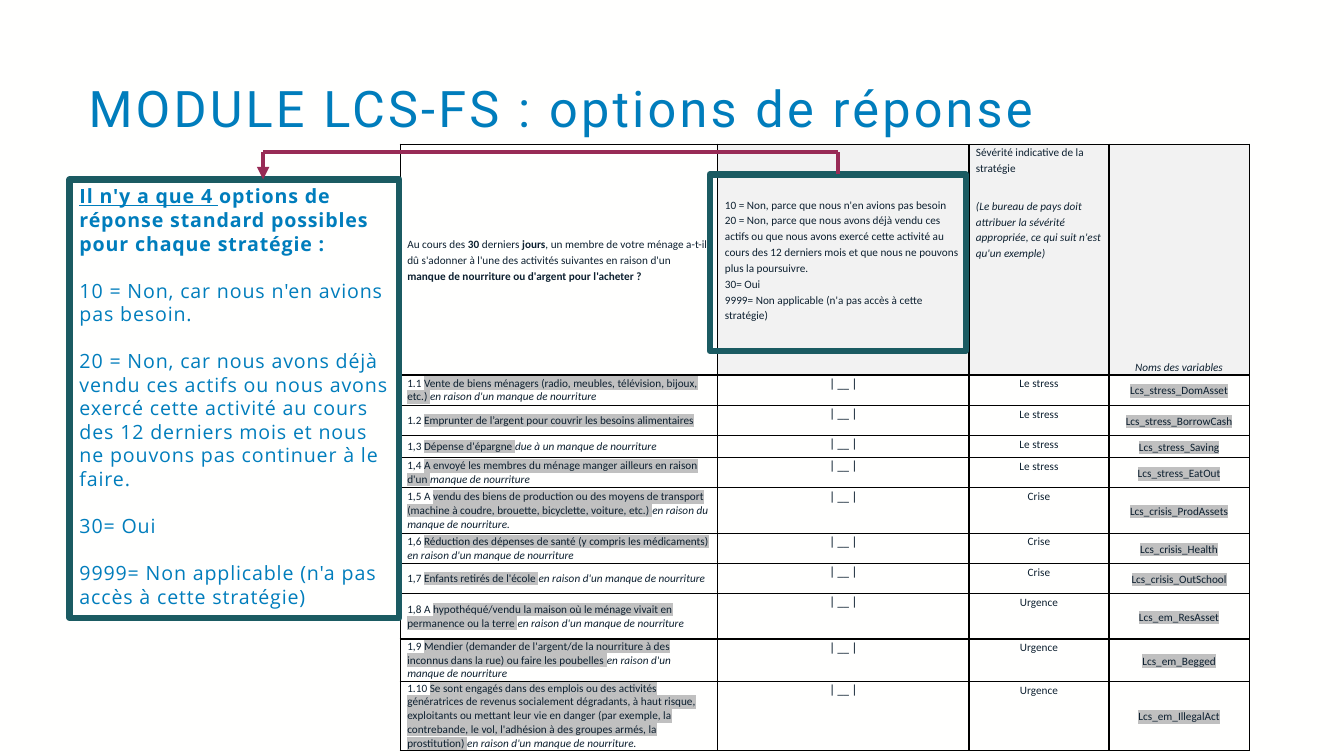
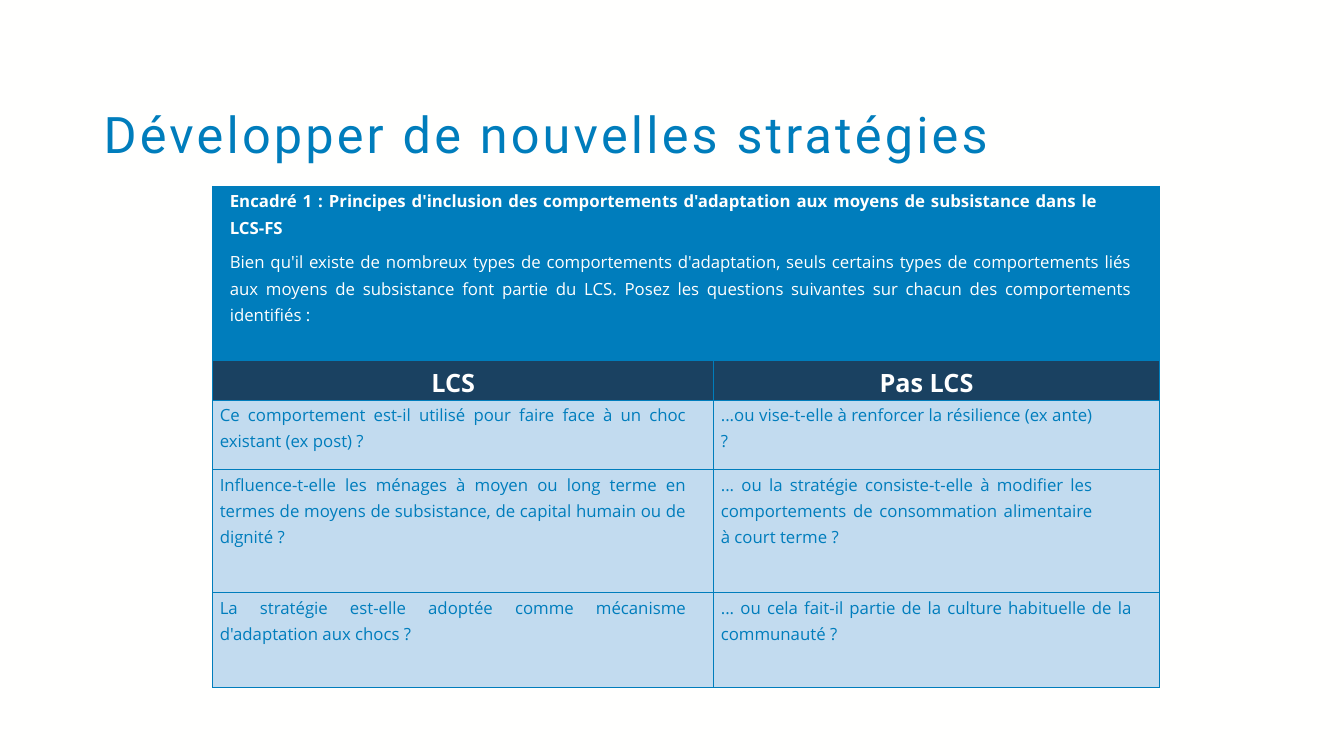
from lxml.etree import SubElement
from pptx import Presentation
from pptx.dml.color import RGBColor
from pptx.enum.shapes import MSO_CONNECTOR as Connector, MSO_SHAPE as Shape
from pptx.enum.text import MSO_ANCHOR as Anchor, PP_ALIGN as Align
from pptx.oxml.ns import qn
from pptx.util import Inches, Pt

PAPER = RGBColor(0xFF, 0xFF, 0xFE)
WHITE = RGBColor(0xFF, 0xFF, 0xFF)
BLACK = RGBColor(0, 0, 0)
INK = RGBColor(0x0D, 0x20, 0x30)
BLUE = RGBColor(0x00, 0x7D, 0xBC)
NAVY = RGBColor(0x1A, 0x41, 0x61)
PALE_BLUE = RGBColor(0xC2, 0xDB, 0xEF)
PALE_GREY = RGBColor(0xF2, 0xF2, 0xF2)
MARKER = RGBColor(0xC0, 0xC0, 0xC0)
TEAL = RGBColor(0x1B, 0x5B, 0x62)
PLUM = RGBColor(0x98, 0x2B, 0x56)

CELL_INSET = Inches(0.07)
SMALL = dict(size=8, font="Calibri", color=INK)
BODY = dict(size=12, font="Open Sans", color=BLUE, line=1.15, after=6)

BOLD = dict(bold=True)
ITALIC = dict(italic=True)
MARKED = dict(highlight=MARKER)
QUESTION = [
    "Au cours des ", ("30 ", BOLD), "derniers ", ("jours", BOLD),
    ", un membre de votre ménage a-t-il dû s'adonner à l'une des activités suivantes en raison d'un ",
    ("manque de nourriture ou d'argent pour l'acheter ?", BOLD)]
CODES = [
    "10 = Non, parce que nous n'en avions pas besoin",
    "20 = Non, parce que nous avons déjà vendu ces actifs ou que nous avons exercé cette activité "
    "au cours des 12 derniers mois et que nous ne pouvons plus la poursuivre.",
    "30= Oui",
    "9999= Non applicable (n'a pas accès à cette stratégie)"]
SEVERITY_NOTE = ("(Le bureau de pays doit attribuer la sévérité appropriée, "
                 "ce qui suit n'est qu'un exemple)")
LACK = "en raison d'un manque de nourriture"
# number, strategy, reason, severity, variable, row height
STRATEGIES = [
    ("1.1 ", "Vente de biens ménagers (radio, meubles, télévision, bijoux, etc.) ", LACK,
     "Le stress", "Lcs_stress_DomAsset", 0.3),
    ("1.2 ", "Emprunter de l’argent pour couvrir les besoins alimentaires", "",
     "Le stress", "Lcs_stress_BorrowCash", 0.3),
    ("1,3 ", "Dépense d'épargne ", "due à un manque de nourriture",
     "Le stress", "Lcs_stress_Saving", 0.22),
    ("1,4 ", "A envoyé les membres du ménage manger ailleurs en raison d'un ", "manque de nourriture",
     "Le stress", "Lcs_stress_EatOut", 0.3),
    ("1,5 A ", "vendu des biens de production ou des moyens de transport (machine à coudre, "
     "brouette, bicyclette, voiture, etc.) ", "en raison du manque de nourriture.",
     "Crise", "Lcs_crisis_ProdAssets", 0.45),
    ("1,6 ", "Réduction des dépenses de santé (y compris les médicaments) ", LACK,
     "Crise", "Lcs_crisis_Health", 0.3),
    ("1,7 ", "Enfants retirés de l'école ", LACK,
     "Crise", "Lcs_crisis_OutSchool", 0.3),
    ("1,8 A ", "hypothéqué/vendu la maison où le ménage vivait en permanence ou la terre ", LACK,
     "Urgence", "Lcs_em_ResAsset", 0.45),
    ("1,9 ", "Mendier (demander de l'argent/de la nourriture à des inconnus dans la rue) "
     "ou faire les poubelles ", LACK,
     "Urgence", "Lcs_em_Begged", 0.42),
    ("1.10 ", "Se sont engagés dans des emplois ou des activités génératrices de revenus "
     "socialement dégradants, à haut risque, exploitants ou mettant leur vie en danger "
     "(par exemple, la contrebande, le vol, l'adhésion à des groupes armés, la prostitution) ",
     LACK + ".", "Urgence", "Lcs_em_IllegalAct", 0.68),
]
ANSWERS = [
    [("Il n'y a que 4 ", dict(bold=True, underline=True)),
     ("options de réponse standard possibles pour chaque stratégie :", BOLD)],
    "10 = Non, car nous n'en avions pas besoin.",
    "20 = Non, car nous avons déjà vendu ces actifs ou nous avons exercé cette activité au cours "
    "des 12 derniers mois et nous ne pouvons pas continuer à le faire.",
    "30= Oui",
    "9999= Non applicable (n'a pas accès à cette stratégie)"]
BOX_TITLE = ("Encadré 1 : Principes d'inclusion des comportements d'adaptation aux moyens de "
             "subsistance dans le LCS-FS")
BOX_INTRO = ("Bien qu'il existe de nombreux types de comportements d'adaptation, seuls certains types "
             "de comportements liés aux moyens de subsistance font partie du LCS. Posez les questions "
             "suivantes sur chacun des comportements identifiés :")
# LCS question, counter-question, right indent of the latter, row height
CRITERIA = [
    ("Ce comportement est-il utilisé pour faire face à un choc existant (ex post) ?",
     "...ou vise-t-elle à renforcer la résilience (ex ante) ?", 0.59, 0.69),
    ("Influence-t-elle les ménages à moyen ou long terme en termes de moyens de subsistance, "
     "de capital humain ou de dignité ?",
     "... ou la stratégie consiste-t-elle à modifier les comportements de consommation alimentaire "
     "à court terme ?", 0.59, 1.22),
    ("La stratégie est-elle adoptée comme mécanisme d'adaptation aux chocs ?",
     "... ou cela fait-il partie de la culture habituelle de la communauté ?", 0.2, 0.94),
]


def format_run(run, size, font, color, bold=False, italic=False, underline=False,
               spacing=0, highlight=None):
    style = run.font
    style.size, style.name = Pt(size), font
    style.bold, style.italic, style.underline = bold, italic, underline
    style.color.rgb = color
    properties = run._r.get_or_add_rPr()
    if spacing:
        properties.set("spc", str(round(spacing * 100)))
    if highlight is not None:
        marker = SubElement(properties, qn("a:highlight"))
        SubElement(marker, qn("a:srgbClr")).set("val", str(highlight))
        properties.find(qn("a:solidFill")).addnext(marker)


def write(frame, text, align=Align.LEFT, line=1.0, before=0, after=0,
          left=0, right=0, **run_format):
    """Add one paragraph; text is a string or a list of strings and (string, format) pairs."""
    first = frame.paragraphs[0]
    paragraph = frame.add_paragraph() if first.runs else first
    paragraph.alignment, paragraph.line_spacing = align, line
    paragraph.space_before, paragraph.space_after = Pt(before), Pt(after)
    properties = paragraph._p.get_or_add_pPr()
    properties.set("marL", str(Inches(left)))
    properties.set("marR", str(Inches(right)))
    for part in [text] if isinstance(text, str) else text:
        words, extra = (part, {}) if isinstance(part, str) else part
        run = paragraph.add_run()
        run.text = words
        format_run(run, **{**run_format, **extra})


def new_slide(deck):
    slide = deck.slides.add_slide(deck.slide_layouts[6])
    slide.background.fill.solid()
    slide.background.fill.fore_color.rgb = PAPER
    return slide


def add_title(slide, text, left, top, width, height, anchor=Anchor.TOP):
    frame = slide.shapes.add_textbox(*map(Inches, (left, top, width, height))).text_frame
    frame.word_wrap, frame.vertical_anchor = True, anchor
    write(frame, text, line=0.9, size=36, font="Roboto", color=BLUE, spacing=2.3)


def add_grid(slide, left, top, widths, heights, border):
    grid = slide.shapes.add_table(len(heights), len(widths), Inches(left), Inches(top),
                                  Inches(sum(widths)), Inches(sum(heights))).table
    grid.first_row = grid.horz_banding = False
    for column, width in zip(grid.columns, widths):
        column.width = Inches(width)
    for row, height in zip(grid.rows, heights):
        row.height = Inches(height)
    for cell in grid.iter_cells():
        cell.margin_left = cell.margin_right = CELL_INSET
        cell.margin_top = cell.margin_bottom = 0
        for side in ("lnL", "lnR", "lnT", "lnB"):
            edge = SubElement(cell._tc.get_or_add_tcPr(), qn(f"a:{side}"), w=str(Pt(1)))
            fill = SubElement(edge, qn("a:solidFill"))
            SubElement(fill, qn("a:srgbClr")).set("val", str(border))
        cell.fill.background()
    return grid


def fill_cell(cell, *paragraphs, fill=None, anchor=Anchor.TOP, **text_format):
    cell.vertical_anchor = anchor
    if fill is not None:
        cell.fill.solid()
        cell.fill.fore_color.rgb = fill
    for text in paragraphs:
        write(cell.text_frame, text, **text_format)


def add_strategy_table(slide, left, top):
    heights = [2.29] + [strategy[-1] for strategy in STRATEGIES]
    grid = add_grid(slide, left, top, [3.15, 2.49, 1.39, 1.39], heights, BLACK)
    loose = dict(SMALL, line=1.15)
    centred = dict(loose, align=Align.CENTER)

    fill_cell(grid.cell(0, 0), QUESTION, anchor=Anchor.MIDDLE, **loose)
    fill_cell(grid.cell(0, 1), *CODES, fill=PALE_GREY, anchor=Anchor.MIDDLE, **loose)
    severity_head = grid.cell(0, 2)
    fill_cell(severity_head, "Sévérité indicative de la stratégie", fill=PALE_GREY, **loose)
    write(severity_head.text_frame, SEVERITY_NOTE, before=15.5, italic=True, **loose)
    fill_cell(grid.cell(0, 3), "Noms des variables", fill=PALE_GREY, anchor=Anchor.BOTTOM,
              italic=True, **centred)

    for row, (number, strategy, reason, severity, variable, _) in enumerate(STRATEGIES, 1):
        label = [number, (strategy, MARKED)] + ([(reason, ITALIC)] if reason else [])
        fill_cell(grid.cell(row, 0), label, anchor=Anchor.MIDDLE, **SMALL)
        fill_cell(grid.cell(row, 1), "| __ |", **{**centred, "font": "DejaVu Sans"})
        fill_cell(grid.cell(row, 2), severity, **centred)
        fill_cell(grid.cell(row, 3), variable, anchor=Anchor.MIDDLE, **centred, **MARKED)


def add_frame(slide, left, top, width, height):
    frame = slide.shapes.add_shape(Shape.RECTANGLE, *map(Inches, (left, top, width, height)))
    frame.shadow.inherit = False
    frame.fill.background()
    frame.line.color.rgb, frame.line.width = TEAL, Pt(4.5)
    return frame


def add_answers(slide, left, top, width, height):
    frame = add_frame(slide, left, top, width, height).text_frame
    frame.word_wrap, frame.vertical_anchor = True, Anchor.TOP
    for index, answer in enumerate(ANSWERS):
        write(frame, answer, before=16.8 if index else 0, size=14, font="Open Sans",
              color=BLUE, spacing=0.6)


def add_line(slide, x1, y1, x2, y2, arrow=False):
    line = slide.shapes.add_connector(Connector.STRAIGHT, *map(Inches, (x1, y1, x2, y2)))
    line.line.color.rgb, line.line.width = PLUM, Pt(3)
    properties = line._element.spPr
    if arrow:
        SubElement(line.line._get_or_add_ln(), qn("a:tailEnd"), type="triangle")
    SubElement(properties, qn("a:effectLst"))
    return line


def add_callout_path(slide, codes_frame, answers_x, answers_top, level):
    """Lead from the codes in the table, along a level, down to the answers."""
    codes_x = (codes_frame.left + codes_frame.width / 2) / Inches(1)
    codes_top = codes_frame.top / Inches(1)
    add_line(slide, answers_x, level, codes_x, level)
    add_line(slide, answers_x, level, answers_x, answers_top, arrow=True)
    add_line(slide, codes_x, level, codes_x, codes_top).end_connect(codes_frame, 0)


def build_answers_slide(deck):
    slide = new_slide(deck)
    add_strategy_table(slide, 3.97, 1.43)
    add_title(slide, "MODULE LCS-FS : options de réponse", 0.78, 0.78, 12.09, 0.72)
    answers_top = 1.78
    add_answers(slide, 0.69, answers_top, 3.27, 4.35)
    codes_frame = add_frame(slide, 7.04, 1.73, 2.54, 1.75)
    add_callout_path(slide, codes_frame, 2.61, answers_top, 1.51)


def add_criteria_table(slide, left, top):
    heights = [1.73, 0.39] + [criterion[-1] for criterion in CRITERIA]
    grid = add_grid(slide, left, top, [4.97, 4.42], heights, BLUE)
    justified = dict(BODY, align=Align.JUSTIFY)

    intro = grid.cell(0, 0)
    intro.merge(grid.cell(0, 1))
    on_blue = dict(justified, color=PAPER, left=0.1)
    fill_cell(intro, BOX_TITLE, fill=BLUE, bold=True, right=0.54, **on_blue)
    write(intro.text_frame, BOX_INTRO, right=0.2, **on_blue)

    heading = dict(BODY, size=18, color=WHITE, bold=True, align=Align.CENTER, right=0.2)
    for column, name in enumerate(("LCS", "Pas LCS")):
        fill_cell(grid.cell(1, column), name, fill=NAVY, **heading)

    for row, (question, counter, indent, _) in enumerate(CRITERIA, 2):
        fill_cell(grid.cell(row, 0), question, fill=PALE_BLUE, right=0.2, **justified)
        fill_cell(grid.cell(row, 1), counter, fill=PALE_BLUE, right=indent, **justified)


def build_criteria_slide(deck):
    slide = new_slide(deck)
    add_title(slide, "Développer de nouvelles stratégies", 0.93, 0.73, 11.53, 1.26, Anchor.MIDDLE)
    add_criteria_table(slide, 2.11, 1.85)


def main():
    deck = Presentation()
    deck.slide_width, deck.slide_height = Inches(13.33), Inches(7.5)
    build_answers_slide(deck)
    build_criteria_slide(deck)
    deck.save("out.pptx")


if __name__ == "__main__":
    main()
